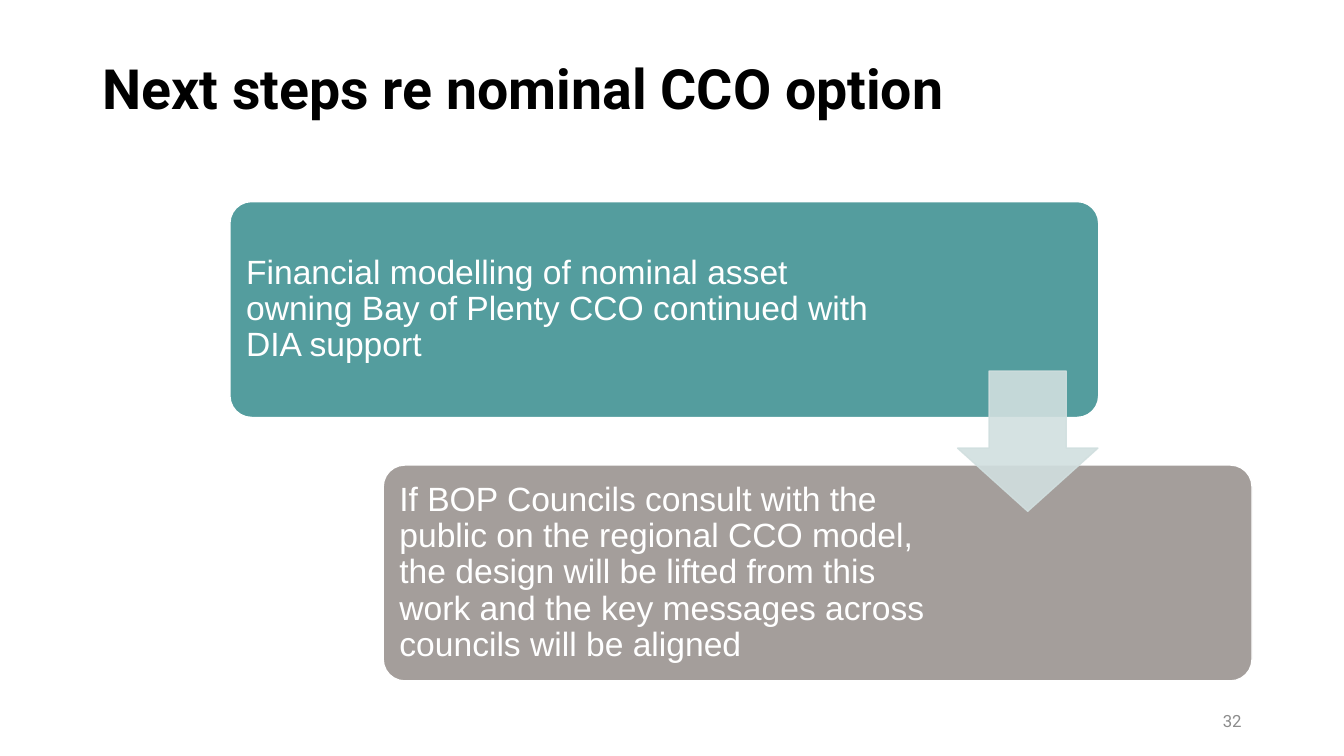
from dataclasses import dataclass

from lxml.etree import SubElement
from pptx import Presentation
from pptx.dml.color import RGBColor
from pptx.enum.shapes import MSO_SHAPE
from pptx.enum.text import MSO_ANCHOR, PP_ALIGN
from pptx.oxml.ns import qn
from pptx.shapes.autoshape import Shape
from pptx.slide import Slide
from pptx.util import Pt

WHITE = RGBColor(0xFF, 0xFF, 0xFF)
BLACK = RGBColor(0x00, 0x00, 0x00)
TEAL = RGBColor(0x54, 0x9D, 0x9E)
TAUPE = RGBColor(0xA4, 0x9E, 0x9B)
PALE_TEAL = RGBColor(0xD1, 0xDF, 0xDF)
GREY = RGBColor(0x8C, 0x8C, 0x8C)

HEADING_FONT = "Roboto"
BODY_FONT = "Arial"

# Staircase of steps, in points
STEP_LEFT, STEP_TOP = 164.2, 144
STEP_WIDTH, STEP_HEIGHT = 620.6, 154.2
STEP_SHIFT, STEP_DROP = 109.5, 188.2
STEP_MARGIN = 7.2


@dataclass(frozen=True)
class Step:
    text: str
    fill: RGBColor
    right_margin: float


STEPS = [
    Step("Financial modelling of nominal asset owning Bay of Plenty CCO "
         "continued with DIA support", TEAL, 157.5),
    Step("If BOP Councils consult with the public on the regional CCO model, "
         "the design will be lifted from this work and the key messages "
         "across councils will be aligned", TAUPE, 217.2),
]


def add_title(slide: Slide, text: str) -> None:
    title = slide.shapes.title
    title.left, title.top, title.width, title.height = Pt(66), Pt(44), Pt(828), Pt(89)
    frame = title.text_frame
    frame.text = text
    frame.word_wrap = True
    frame.vertical_anchor = MSO_ANCHOR.TOP
    frame.margin_top = Pt(0)
    paragraph = frame.paragraphs[0]
    paragraph.alignment = PP_ALIGN.LEFT
    paragraph.line_spacing = 0.9
    font = paragraph.font
    font.name, font.size, font.bold = HEADING_FONT, Pt(39.6), True
    font.color.rgb = BLACK


def add_block(slide: Slide, kind: MSO_SHAPE, left: float, top: float, width: float,
              height: float, fill: RGBColor, line: RGBColor) -> Shape:
    shape = slide.shapes.add_shape(kind, Pt(left), Pt(top), Pt(width), Pt(height))
    shape.shadow.inherit = False
    shape.fill.solid()
    shape.fill.fore_color.rgb = fill
    shape.line.color.rgb = line
    shape.line.width = Pt(1)
    return shape


def add_step(slide: Slide, index: int, step: Step) -> None:
    shape = add_block(slide, MSO_SHAPE.ROUNDED_RECTANGLE,
                      STEP_LEFT + index * STEP_SHIFT, STEP_TOP + index * STEP_DROP,
                      STEP_WIDTH, STEP_HEIGHT, step.fill, WHITE)
    shape.adjustments[0] = 0.1
    frame = shape.text_frame
    frame.text = step.text
    frame.word_wrap = True
    frame.vertical_anchor = MSO_ANCHOR.MIDDLE
    frame.margin_left = frame.margin_top = frame.margin_bottom = Pt(STEP_MARGIN)
    frame.margin_right = Pt(step.right_margin)
    paragraph = frame.paragraphs[0]
    paragraph.alignment = PP_ALIGN.LEFT
    paragraph.line_spacing = 0.9
    font = paragraph.font
    font.name, font.size = BODY_FONT, Pt(24)
    font.color.rgb = WHITE


def add_step_arrow(slide: Slide) -> None:
    arrow = add_block(slide, MSO_SHAPE.DOWN_ARROW, 684, 265, 100.2, 100.2,
                      PALE_TEAL, PALE_TEAL)
    arrow.adjustments[0] = 0.55
    arrow.adjustments[1] = 0.45
    # 90 % opacity for both fill and outline
    for color in arrow.element.spPr.iter(qn("a:srgbClr")):
        SubElement(color, qn("a:alpha")).set("val", "90000")


def add_page_number(slide: Slide, number: str) -> None:
    box = slide.shapes.add_textbox(Pt(678), Pt(500.5), Pt(216), Pt(28.8))
    frame = box.text_frame
    frame.text = number
    frame.word_wrap = True
    frame.vertical_anchor = MSO_ANCHOR.MIDDLE
    paragraph = frame.paragraphs[0]
    paragraph.alignment = PP_ALIGN.RIGHT
    paragraph.space_after = Pt(6)
    font = paragraph.font
    font.name, font.size = HEADING_FONT, Pt(12)
    font.color.rgb = GREY


def main() -> None:
    presentation = Presentation()
    presentation.slide_width, presentation.slide_height = Pt(960), Pt(540)
    slide = presentation.slides.add_slide(presentation.slide_layouts.get_by_name("Title Only"))

    # Heading and page number
    add_title(slide, "Next steps re nominal CCO option")
    add_page_number(slide, "32")

    # Steps, with the arrow that leads from one to the next
    for index, step in enumerate(STEPS):
        add_step(slide, index, step)
    add_step_arrow(slide)

    presentation.save("out.pptx")


if __name__ == "__main__":
    main()
